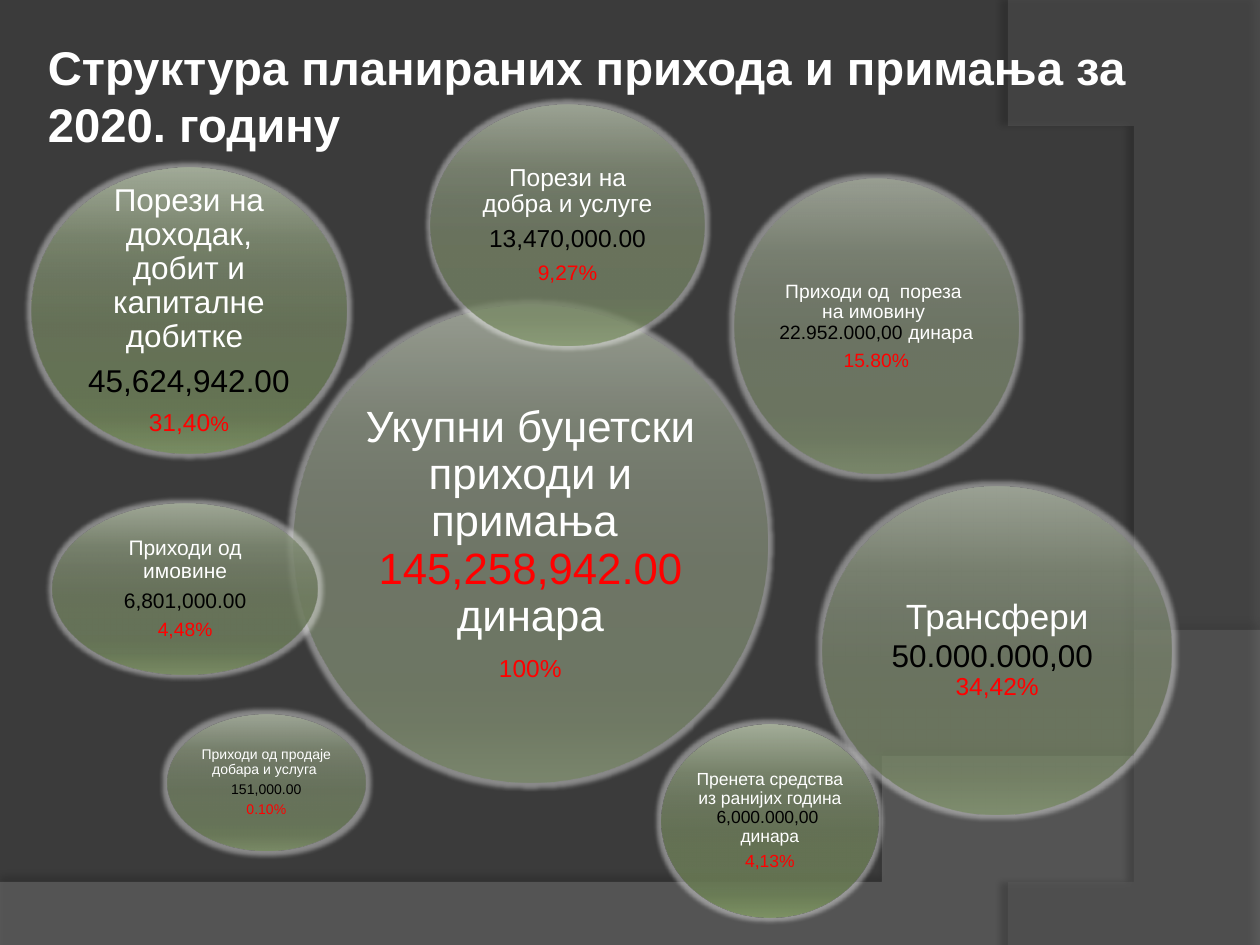
from dataclasses import dataclass

import lxml.etree
import pptx
import pptx.dml.color
import pptx.enum.shapes
import pptx.enum.text
import pptx.oxml
import pptx.oxml.ns
import pptx.util

RGBColor = pptx.dml.color.RGBColor
WHITE = RGBColor(0xFF, 0xFF, 0xFF)
BLACK = RGBColor(0x00, 0x00, 0x00)
RED = RGBColor(0xFF, 0x00, 0x00)
BACKGROUND = RGBColor(0x3B, 0x3B, 0x3B)
LOWER_WAVE = RGBColor(0x7F, 0x7F, 0x7F)
RIGHT_WAVE = RGBColor(0x5E, 0x5E, 0x5E)

FONT = "Arial"
WIDTH, HEIGHT = pptx.util.Inches(10), pptx.util.Inches(7.5)

# Gradient stops: position, colour of the first bubble, colour of the last
STOPS = [
    (0, RGBColor(0xA5, 0xAF, 0x9A), RGBColor(0xAA, 0xB6, 0x9D)),
    (25, RGBColor(0x6A, 0x77, 0x5C), RGBColor(0x73, 0x81, 0x63)),
    (38, RGBColor(0x5D, 0x69, 0x4F), RGBColor(0x65, 0x73, 0x55)),
    (55, RGBColor(0x53, 0x61, 0x42), RGBColor(0x5C, 0x6C, 0x49)),
    (80, RGBColor(0x52, 0x64, 0x3E), RGBColor(0x5B, 0x6E, 0x45)),
    (88, RGBColor(0x57, 0x6B, 0x3F), RGBColor(0x60, 0x76, 0x46)),
    (100, RGBColor(0x6B, 0x83, 0x50), RGBColor(0x77, 0x91, 0x59)),
]
FIRST_OPACITY, LAST_OPACITY = 50, 80


@dataclass
class Run:
    text: str
    size: float
    color: RGBColor = WHITE


@dataclass
class Bubble:
    """Box in percent of the slide's width and height, with its paragraphs."""
    left: float
    top: float
    width: float
    height: float
    paragraphs: list[list[Run]]


# From back to front
BUBBLES = [
    Bubble(23.3, 32.27, 37.6, 50.53, [
        [Run("Укупни буџетски приходи и примања  ", 25),
         Run("145,258,942.00 ", 25, RED), Run("динара", 25)],
        [Run("100%", 14, RED)]]),
    Bubble(58.3, 18.93, 22.5, 31.2, [
        [Run("Приходи од  пореза  на имовину  ", 11),
         Run("22.952.000,00 ", 11, BLACK), Run("динара", 11)],
        [Run("15.80%", 11, RED)]]),
    Bubble(65.3, 51.47, 27.7, 34.67, [
        [Run("Трансфери ", 20), Run("50.000.000,00", 18, BLACK),
         Run("  ", 20, RED), Run("34,42%", 14, RED)]]),
    Bubble(34.2, 11.07, 21.7, 25.47, [
        [Run("Порези на добра и услуге", 14)],
        [Run("13,470,000.00", 14, BLACK)],
        [Run("9,27%", 12, RED)]]),
    Bubble(13.3, 75.6, 15.7, 14.4, [
        [Run("Приходи од продаје добара и услуга ", 8)],
        [Run("151,000.00", 8, BLACK)],
        [Run("0.10%", 8, RED)]]),
    Bubble(4.2, 53.33, 21, 18, [
        [Run("Приходи од имовине", 12)],
        [Run("6,801,000.00", 12, BLACK)],
        [Run("4,48%", 11, RED)]]),
    Bubble(2.5, 17.73, 25, 30.27, [
        [Run("Порези на доходак, добит и капиталне добитке ", 18)],
        [Run("45,624,942.00", 18, BLACK)],
        [Run("31,40", 14, RED), Run("%", 12, RED)]]),
    Bubble(52.5, 76.67, 17.2, 20.4, [
        [Run("Пренета средства из ранијих година ", 10),
         Run("6,000.000,00  ", 10, BLACK), Run("динара", 10)],
        [Run("4,13%", 10, RED)]]),
]


def across(percent: float) -> int:
    return round(WIDTH * percent / 100)


def down(percent: float) -> int:
    return round(HEIGHT * percent / 100)


def add_color(parent, color: RGBColor, opacity: float) -> None:
    node = lxml.etree.SubElement(parent, pptx.oxml.ns.qn("a:srgbClr"), val=str(color))
    lxml.etree.SubElement(node, pptx.oxml.ns.qn("a:alpha"), val=str(round(opacity * 1000)))


def add_effect(shape, kind: str, color: RGBColor, opacity: float, **settings: int) -> None:
    shape.shadow.inherit = False
    effects = shape._element.spPr.find(pptx.oxml.ns.qn("a:effectLst"))
    effect = lxml.etree.SubElement(effects, pptx.oxml.ns.qn(kind))
    for name, value in settings.items():
        effect.set(name, str(value))
    add_color(effect, color, opacity)


def bezier(start, control_1, control_2, end, steps: int = 48) -> list:
    """Points along a cubic curve, without its start."""
    points = []
    for step in range(1, steps + 1):
        t = step / steps
        weights = ((1 - t) ** 3, 3 * t * (1 - t) ** 2, 3 * t * t * (1 - t), t ** 3)
        corners = (start, control_1, control_2, end)
        points.append(tuple(sum(w * c[axis] for w, c in zip(weights, corners))
                            for axis in (0, 1)))
    return points


def add_wave(slide, points: list, color: RGBColor, opacity: float,
             shadow_opacity: float, distance: float, direction: int) -> None:
    builder = slide.shapes.build_freeform(*points[0], scale=pptx.util.Inches(1))
    builder.add_line_segments(points[1:], close=True)
    shape = builder.convert_to_shape()
    shape.fill.solid()
    shape.fill.fore_color.rgb = color
    srgb = next(shape._element.spPr.iter(pptx.oxml.ns.qn("a:srgbClr")))
    lxml.etree.SubElement(srgb, pptx.oxml.ns.qn("a:alpha"), val=str(opacity * 1000))
    shape.line.fill.background()
    add_effect(shape, "a:outerShdw", BLACK, shadow_opacity, blurRad=pptx.util.Pt(4),
               dist=pptx.util.Pt(distance), dir=direction * 60000)


def fill_gradient(shape, share: float) -> None:
    """Fill from top to bottom; share runs from 0 (back) to 1 (front)."""
    shape.fill.gradient()
    shape.fill.gradient_angle = 270
    stop_list = next(shape._element.spPr.iter(pptx.oxml.ns.qn("a:gsLst")))
    for old_stop in list(stop_list):
        stop_list.remove(old_stop)
    opacity = FIRST_OPACITY + share * (LAST_OPACITY - FIRST_OPACITY)
    for position, first, last in STOPS:
        color = RGBColor(*(round(a + share * (b - a)) for a, b in zip(first, last)))
        stop = lxml.etree.SubElement(stop_list, pptx.oxml.ns.qn("a:gs"),
                                     pos=str(position * 1000))
        add_color(stop, color, opacity)


def set_frame(frame, margin: float) -> None:
    frame.word_wrap = True
    frame.vertical_anchor = pptx.enum.text.MSO_ANCHOR.MIDDLE
    frame.margin_left = frame.margin_right = pptx.util.Inches(margin)
    frame.margin_top = frame.margin_bottom = pptx.util.Inches(margin)


def add_bubble(slide, bubble: Bubble, share: float) -> None:
    shape = slide.shapes.add_shape(
        pptx.enum.shapes.MSO_SHAPE.OVAL, across(bubble.left), down(bubble.top),
        across(bubble.width), down(bubble.height))
    fill_gradient(shape, share)
    shape.line.fill.background()
    add_effect(shape, "a:glow", WHITE, 40, rad=pptx.util.Pt(5))
    frame = shape.text_frame
    set_frame(frame, 0.02)
    for index, runs in enumerate(bubble.paragraphs):
        paragraph = frame.add_paragraph() if index else frame.paragraphs[0]
        paragraph.alignment = pptx.enum.text.PP_ALIGN.CENTER
        paragraph.line_spacing = 0.9
        paragraph.space_after = pptx.util.Pt(round(0.35 * runs[0].size, 1))
        paragraph.font.name = FONT
        for item in runs:
            run = paragraph.add_run()
            run.text = item.text
            run.font.size = pptx.util.Pt(item.size)
            run.font.color.rgb = item.color


def add_title(slide, text: str) -> None:
    box = slide.shapes.add_textbox(across(3.3), down(4.4), across(91.7), down(11.33))
    set_frame(box.text_frame, 0.05)
    paragraph = box.text_frame.paragraphs[0]
    paragraph.text = text
    paragraph.font.name = FONT
    paragraph.font.size = pptx.util.Pt(27)
    paragraph.font.bold = True
    paragraph.font.color.rgb = WHITE


def main() -> None:
    presentation = pptx.Presentation()
    presentation.slide_width, presentation.slide_height = WIDTH, HEIGHT
    slide = presentation.slides.add_slide(presentation.slide_layouts[6])
    slide.background.fill.solid()
    slide.background.fill.fore_color.rgb = BACKGROUND

    # Background waves
    lower = [(0, 7.05), (0, 7.51), (10, 7.51), (10, 5.2)]
    lower += bezier((10, 5.2), (5.59, 7.29), (3.91, 7.19), (0, 7.05))
    add_wave(slide, lower, LOWER_WAVE, 45, 35, 3.5, 270)
    right = [(10, 0.02), (10, 7.5), (8.21, 7.5)]
    right += bezier((8.21, 7.5), (9.35, 6.19), (10.18, 3), (8, 0))
    add_wave(slide, right, RIGHT_WAVE, 40, 45, 4, 180)

    # Title and bubbles
    add_title(slide, "Структура планираних прихода и примања за 2020. годину")
    for index, bubble in enumerate(BUBBLES):
        add_bubble(slide, bubble, index / (len(BUBBLES) - 1))

    presentation.save("out.pptx")


if __name__ == "__main__":
    main()
